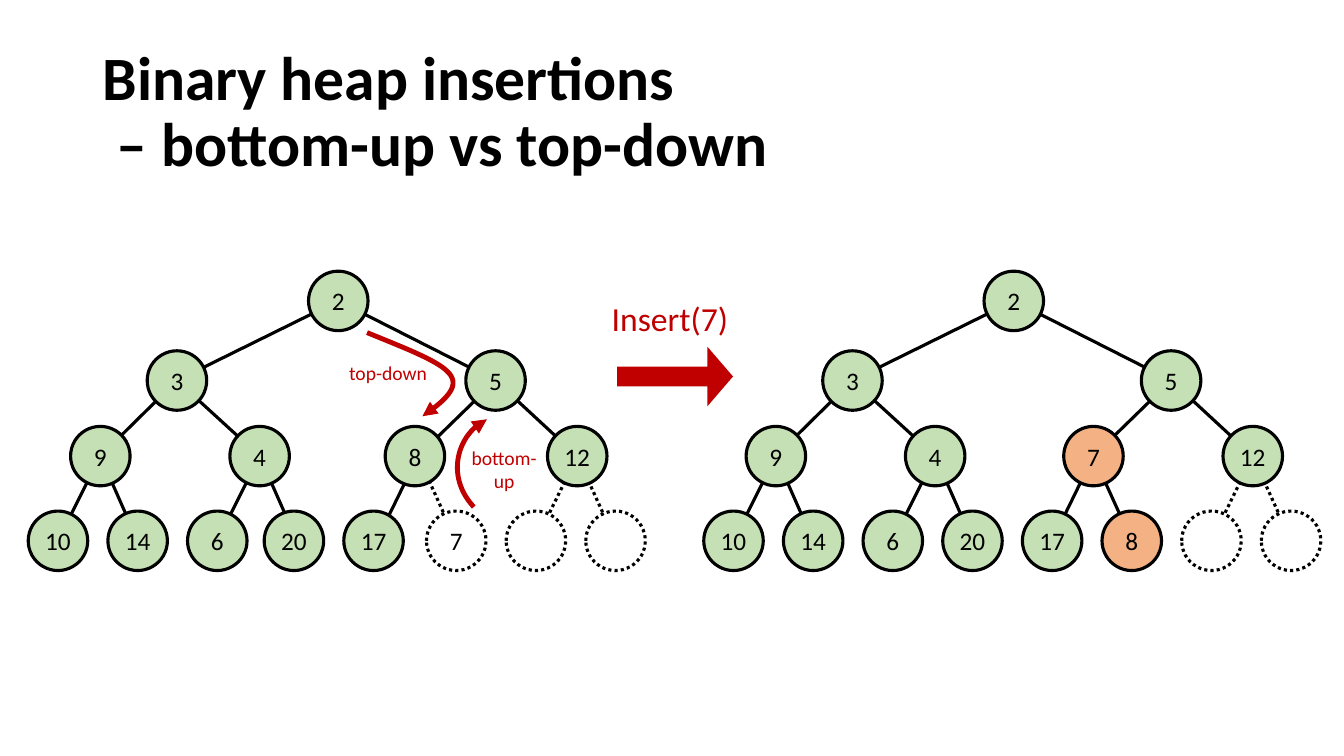
from lxml.etree import SubElement
from pptx import Presentation
from pptx.dml.color import RGBColor
from pptx.enum.dml import MSO_LINE_DASH_STYLE as Dash
from pptx.enum.shapes import MSO_CONNECTOR as Connector, MSO_SHAPE as Shape
from pptx.enum.text import MSO_ANCHOR as Anchor, PP_ALIGN as Align
from pptx.oxml.ns import qn
from pptx.util import Inches, Pt

COLORS = {"ink": "000000", "settled": "C5E0B4", "moved": "F4B183",
          "vacant": "FFFFFF", "accent": "C00000"}
FONT = "Calibri"
TITLE = "Binary heap insertions\n – bottom-up vs top-down"

DIAMETER = 0.59
LEVEL_TOPS = [2.69, 3.48, 4.23, 5.07]
LEAF_LEFT, LEAF_STEP = 0.28, 0.79
INNER_LEFTS = [3.06, 1.46, 4.62, 0.7, 2.28, 3.85, 5.43]
NODE_LEFTS = INNER_LEFTS + [LEAF_LEFT + LEAF_STEP * leaf for leaf in range(8)]

HEAPS = [
    {"left": 0, "keys": [2, 3, 5, 9, 4, 8, 12, 10, 14, 6, 20, 17, 7, "", ""],
     "moved": (), "vacant": (12, 13, 14), "nudges": {5: -0.03, 10: -0.03, 11: -0.03}},
    {"left": 6.7, "keys": [2, 3, 5, 9, 4, 7, 12, 10, 14, 6, 20, 17, 8, "", ""],
     "moved": (5, 12), "vacant": (13, 14), "nudges": {}},
]

LABELS = [
    ("Insert(7)", (5.41, 2.91, 2.47, 0.5), 24),
    ("bottom-\nup", (4.45, 4.37, 1.1, 0.57), 14),
    ("top-down", (3.3, 3.53, 1.1, 0.34), 14),
]
INSERT_ARROW = (6.12, 3.44, 1.15, 0.59)
PATHS = [
    [(4.7, 5.03), (4.41, 4.72), (4.54, 4.3), (4.83, 4.16)],
    [(3.64, 3.3), (4.5, 3.65), (4.76, 3.74), (4.19, 4.13)],
]
CURVE_STEPS = 32


def rgb(name):
    return RGBColor.from_string(COLORS[name])


def write(shape, text, size, color="ink", bold=False, align=Align.CENTER,
          anchor=Anchor.TOP, side_inset=0.1, spacing=None):
    frame = shape.text_frame
    frame.word_wrap = True
    frame.vertical_anchor = anchor
    frame.margin_left = frame.margin_right = Inches(side_inset)
    paragraph = frame.paragraphs[0]
    paragraph.text = text
    paragraph.alignment = align
    paragraph.line_spacing = spacing
    for run in paragraph.runs:
        run.font.name = FONT
        run.font.size = Pt(size)
        run.font.bold = bold
        run.font.color.rgb = rgb(color)


def outline(shape, color="ink", width=2.25, dotted=False):
    shape.line.color.rgb = rgb(color)
    shape.line.width = Pt(width)
    if dotted:
        shape.line.dash_style = Dash.ROUND_DOT


def draw_edge(shapes, start, end, dotted):
    edge = shapes.add_connector(Connector.STRAIGHT, *map(Inches, start + end))
    outline(edge, dotted=dotted)
    SubElement(edge._element.spPr, qn("a:effectLst"))


def draw_node(shapes, left, top, key, state):
    node = shapes.add_shape(Shape.OVAL, *map(Inches, (left, top, DIAMETER, DIAMETER)))
    node.shadow.inherit = False
    node.fill.solid()
    node.fill.fore_color.rgb = rgb(state)
    outline(node, dotted=state == "vacant")
    if key:
        write(node, key, 18, anchor=Anchor.MIDDLE, side_inset=0)


def draw_heap(shapes, heap):
    places = [(heap["left"] + left, LEVEL_TOPS[(index + 1).bit_length() - 1])
              for index, left in enumerate(NODE_LEFTS)]
    centers = [(left + DIAMETER / 2, top + DIAMETER / 2) for left, top in places]
    for child in range(1, len(centers)):
        draw_edge(shapes, centers[child], centers[(child - 1) // 2], child in heap["vacant"])
    for index, ((left, top), key) in enumerate(zip(places, heap["keys"])):
        state = ("moved" if index in heap["moved"]
                 else "vacant" if index in heap["vacant"] else "settled")
        draw_node(shapes, left + heap["nudges"].get(index, 0), top, str(key), state)


def bezier(controls, t):
    weights = ((1 - t) ** 3, 3 * t * (1 - t) ** 2, 3 * t * t * (1 - t), t ** 3)
    return tuple(Inches(sum(w * point[axis] for w, point in zip(weights, controls)))
                 for axis in (0, 1))


def draw_path(shapes, controls):
    points = [bezier(controls, step / CURVE_STEPS) for step in range(CURVE_STEPS + 1)]
    builder = shapes.build_freeform(*points[0])
    builder.add_line_segments(points[1:], close=False)
    curve = builder.convert_to_shape()
    curve.shadow.inherit = False
    curve.fill.background()
    outline(curve, "accent", 3.5)
    SubElement(curve.line._get_or_add_ln(), qn("a:tailEnd"), type="triangle")


def main():
    deck = Presentation()
    deck.slide_width, deck.slide_height = Inches(13.33), Inches(7.5)
    shapes = deck.slides.add_slide(deck.slide_layouts[6]).shapes

    title = shapes.add_textbox(*map(Inches, (0.92, 0.4, 12.47, 1.45)))
    write(title, TITLE, 44, bold=True, align=Align.LEFT, anchor=Anchor.MIDDLE, spacing=0.9)

    for heap in HEAPS:
        draw_heap(shapes, heap)

    arrow = shapes.add_shape(Shape.RIGHT_ARROW, *map(Inches, INSERT_ARROW))
    arrow.adjustments[0], arrow.adjustments[1] = 0.33, 0.43
    arrow.shadow.inherit = False
    arrow.fill.solid()
    arrow.fill.fore_color.rgb = rgb("accent")
    arrow.line.fill.background()

    for controls in PATHS:
        draw_path(shapes, controls)
    for text, box, size in LABELS:
        write(shapes.add_textbox(*map(Inches, box)), text, size, color="accent")

    deck.save("out.pptx")


if __name__ == "__main__":
    main()
